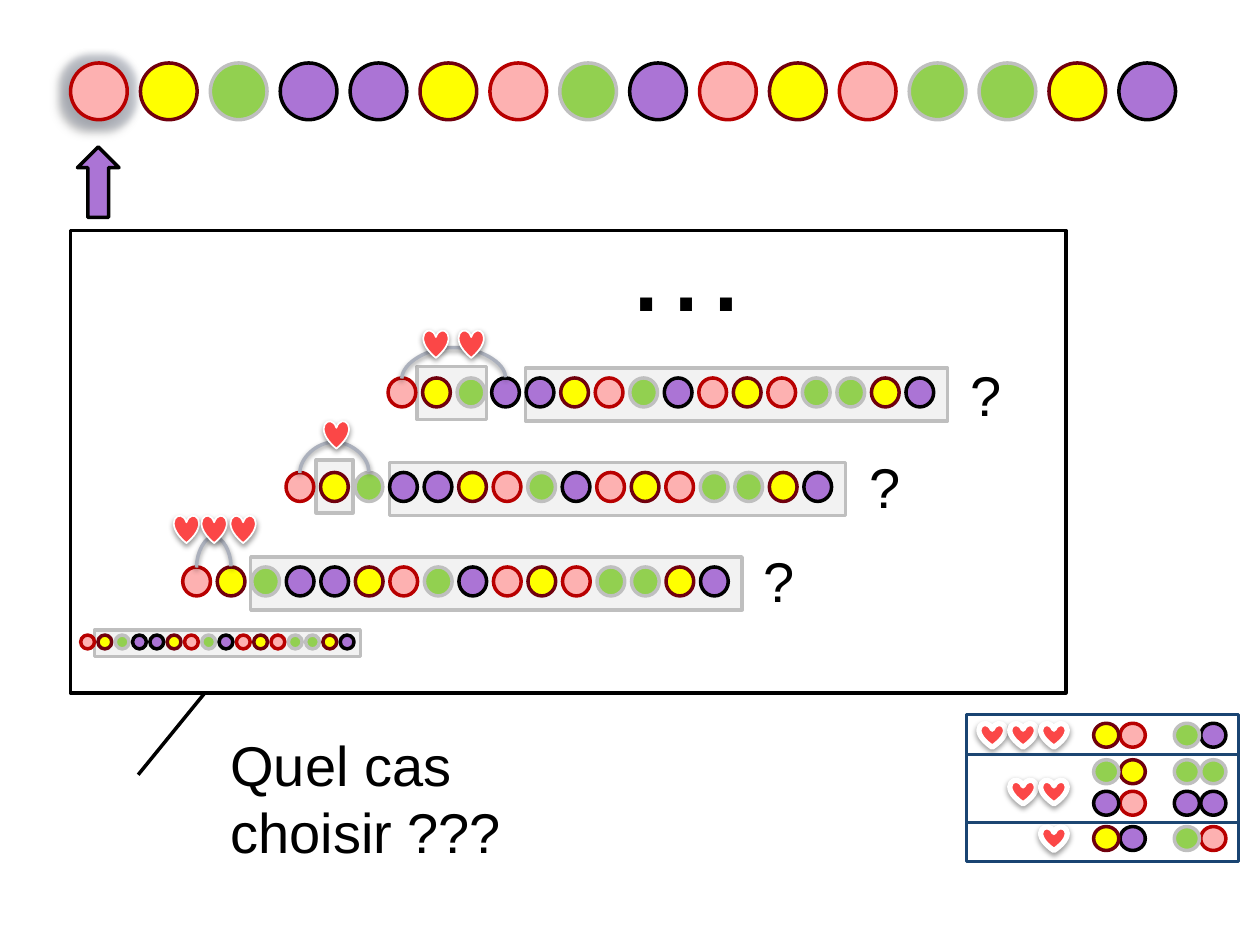
"""Build a slide that weighs the ways to pair the first bead of a chain."""
from dataclasses import dataclass
from typing import Any

from lxml.etree import SubElement
from pptx import Presentation
from pptx.dml.color import RGBColor
from pptx.enum.shapes import MSO_CONNECTOR, MSO_SHAPE
from pptx.enum.text import MSO_AUTO_SIZE
from pptx.oxml.ns import qn
from pptx.util import Inches, Pt

HUES = {
    "black": "000000", "white": "FFFFFF", "pale": "F2F2F2", "grey": "BFBFBF",
    "arc": "ABB0BC", "heart": "FB4747", "navy": "194472", "rule": "1C4672",
    "red": "FDB1B1", "ruby": "B80000", "yellow": "FFFF00", "wine": "70000D",
    "green": "92D050", "purple": "AB74D5",
}
BEADS = {"r": ("red", "ruby"), "y": ("yellow", "wine"),
         "g": ("green", "grey"), "p": ("purple", "black")}
CHAIN = "rygppyrgpryrggyp"


@dataclass(frozen=True)
class Shade:
    """Shadow strength in percent, lengths in points, angle in degrees."""
    alpha: int
    blur: float
    dist: float
    angle: int


@dataclass(frozen=True)
class Row:
    """A chain of beads with its frames, arc and question mark."""
    left: float
    last: float
    top: float
    wide: float
    high: float
    frames: tuple = ()
    mate: int = 0
    ask: tuple = ()
    hearts: tuple = ()


@dataclass(frozen=True)
class Rank:
    """A legend score: its hearts and the bead pairs that earn it."""
    count: int
    top: float
    pairs: tuple


SOFT = Shade(38, 3.1, 1.6, 90)
ROWS = (
    Row(0.64, 2.7, 5.04, 0.11, 0.11, ((0.75, 5, 2.11, 0.21),)),
    Row(1.45, 5.56, 4.5, 0.22, 0.23, ((1.99, 4.42, 3.9, 0.42),),
        1, (5.96, 4.29), ((1.38, 4.09), (1.6, 4.09), (1.83, 4.09))),
    Row(2.27, 6.38, 3.75, 0.22, 0.23,
        ((2.51, 3.65, 0.29, 0.42), (3.09, 3.67, 3.62, 0.42)),
        2, (6.8, 3.54), ((2.57, 3.34),)),
    Row(3.08, 7.19, 3, 0.22, 0.23,
        ((3.31, 2.91, 0.55, 0.42), (4.17, 2.92, 3.35, 0.42)),
        3, (7.6, 2.81), ((3.36, 2.62), (3.64, 2.62))),
)
RANKS = (
    Rank(3, 5.74, ((5.74, "yr", "gp"),)),
    Rank(2, 6.19, ((6.03, "gy", "gg"), (6.28, "pr", "pp"))),
    Rank(1, 6.56, ((6.56, "yp", "gr"),)),
)


def tint(name: str) -> RGBColor:
    """Return a named colour."""
    return RGBColor.from_string(HUES[name])


def hue(parent: Any, name: str, alpha: int) -> None:
    """Add a translucent colour to an effect."""
    node = SubElement(parent, qn("a:srgbClr"), val=HUES[name])
    SubElement(node, qn("a:alpha"), val=str(alpha * 1000))


def shade(item: Any, cast: Shade | None = None, glow: float = 0) -> None:
    """Replace the theme effects with a glow, a shadow or nothing."""
    box = SubElement(item._element.spPr, qn("a:effectLst"))
    if glow:
        hue(SubElement(box, qn("a:glow"), rad=str(Pt(glow))), "arc", 60)
    if cast:
        node = SubElement(box, qn("a:outerShdw"), blurRad=str(Pt(cast.blur)),
                          dist=str(Pt(cast.dist)), dir=str(cast.angle * 60000),
                          algn="ctr", rotWithShape="0")
        hue(node, "black", cast.alpha)


def draw(to: Any, kind: MSO_SHAPE, at: tuple, fill: str, edge: str,
         width: float = 2, cast: Shade | None = None, glow: float = 0) -> Any:
    """Draw a filled preset shape."""
    item = to.add_shape(kind, *map(Inches, at))
    item.fill.solid()
    item.fill.fore_color.rgb = tint(fill)
    item.line.color.rgb = tint(edge)
    item.line.width = Pt(width)
    shade(item, cast, glow)
    return item


def link(to: Any, kind: MSO_CONNECTOR, ends: tuple, edge: str,
         width: float, cast: Shade | None = None) -> Any:
    """Draw a connector between two points."""
    item = to.add_connector(kind, *map(Inches, ends))
    item.line.color.rgb = tint(edge)
    item.line.width = Pt(width)
    shade(item, cast)
    return item


def bow(to: Any, start: float, end: float, base: float) -> None:
    """Draw an arc that joins two beads from above."""
    thin, span = 0.01, end - start
    mid = (start + end) / 2
    ends = (mid + thin / 2, base + span / 2, mid - thin / 2, base - span / 2)
    item = link(to, MSO_CONNECTOR.CURVE, ends, "arc", 2, SOFT)
    item._element.spPr.find(qn("a:xfrm")).set("rot", str(90 * 60000))
    guides = item._element.spPr.find(qn("a:prstGeom")).get_or_add_avLst()
    SubElement(guides, qn("a:gd"), name="adj1", fmla="val 2500000")


def write(to: Any, text: str, at: tuple, size: int = 32,
          color: str = "black", font: str = "Arial") -> None:
    """Write text in a box that grows with it."""
    frame = to.add_textbox(*map(Inches, at)).text_frame
    frame.word_wrap = False
    frame.auto_size = MSO_AUTO_SIZE.SHAPE_TO_FIT_TEXT
    frame.text = text
    for run in frame.paragraphs[0].runs:
        run.font.size = Pt(size)
        run.font.name = font
        run.font.color.rgb = tint(color)


def bead(to: Any, key: str, at: tuple, **form: Any) -> None:
    """Draw one bead of the chain."""
    draw(to, MSO_SHAPE.OVAL, at, *BEADS[key], **form)


def heart(to: Any, at: tuple, width: float = 1) -> None:
    """Draw one heart."""
    draw(to, MSO_SHAPE.HEART, at, "heart", "white", width, SOFT)


def chain(to: Any, row: Row) -> None:
    """Draw one way to split the chain."""
    step = (row.last - row.left) / (len(CHAIN) - 1)
    for frame in row.frames:
        draw(to, MSO_SHAPE.RECTANGLE, frame, "pale", "grey")
    for spot, key in enumerate(CHAIN):
        bead(to, key, (row.left + spot * step, row.top, row.wide, row.high))
    if row.mate:
        start = row.left + row.wide / 2
        bow(to, start, start + row.mate * step, row.top)
    if row.ask:
        write(to, "?", (*row.ask, 0.41, 0.64))
    for spot in row.hearts:
        heart(to, (*spot, 0.2, 0.22))


def legend(to: Any) -> None:
    """Draw the table of pair scores."""
    draw(to, MSO_SHAPE.RECTANGLE, (7.67, 5.67, 2.16, 1.17), "white", "navy", 1.5)
    for rank in RANKS:
        for top, *pairs in rank.pairs:
            for left, pair in zip((8.68, 9.32), pairs):
                for spot in (1, 0):
                    bead(to, pair[spot], (left + 0.21 * spot, top, 0.2, 0.19))
        for spot in reversed(range(rank.count)):
            heart(to, (8.26 - 0.245 * spot, rank.top, 0.21, 0.19), 3)
    for top in (5.99, 6.53):
        link(to, MSO_CONNECTOR.STRAIGHT, (7.67, top, 9.83, top), "rule", 1.5)


def main() -> None:
    """Build and save the slide."""
    deck = Presentation()
    deck.slide_width, deck.slide_height = Inches(10), Inches(7.5)
    page = deck.slides.add_slide(deck.slide_layouts[6]).shapes
    call = draw(page, MSO_SHAPE.LINE_CALLOUT_1, (0.56, 1.83, 7.9, 3.67),
                "white", "black")
    for spot, value in enumerate((1, 0.135, 1.177, 0.068)):
        call.adjustments[spot] = value
    step = (8.88 - 0.56) / (len(CHAIN) - 1)
    for spot, key in enumerate(CHAIN):
        form = {} if spot else {"cast": Shade(40, 4, 3, 135), "glow": 8}
        bead(page, key, (0.56 + spot * step, 0.5, 0.45, 0.45), **form)
    for row in ROWS:
        chain(page.add_group_shape().shapes, row)
    write(page, "…", (4.85, 1.42, 0.9, 1.31), size=72)
    arrow = draw(page, MSO_SHAPE.RIGHT_ARROW, (0.5, 1.28, 0.56, 0.33),
                 "purple", "black")
    arrow.rotation = 270
    write(page, "Quel cas\vchoisir ???", (1.73, 5.75, 3.77, 0.64))
    legend(page.add_group_shape().shapes)
    deck.save("out.pptx")


if __name__ == "__main__":
    main()
